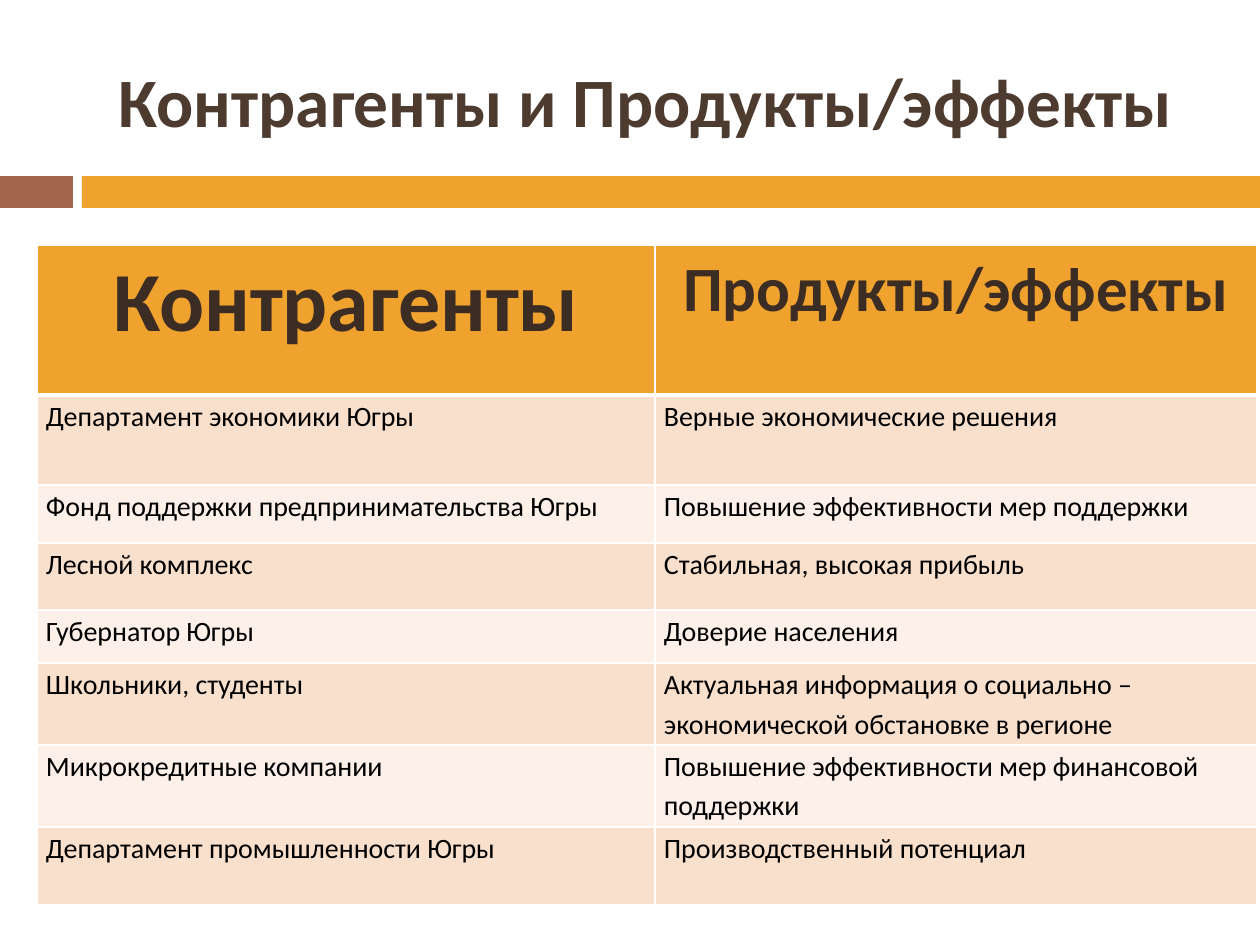
from lxml.etree import SubElement
from pptx import Presentation
from pptx.dml.color import RGBColor
from pptx.enum.shapes import MSO_SHAPE as Shape
from pptx.enum.text import MSO_ANCHOR as Anchor, PP_ALIGN as Align
from pptx.oxml.ns import qn
from pptx.util import Pt

PX = 914400 // 126
FONT = "Calibri"
ORANGE = RGBColor(0xF0, 0xA2, 0x2E)
RUST = RGBColor(0xA5, 0x64, 0x4E)
BROWN = RGBColor(0x4E, 0x3B, 0x30)
DARK = RGBColor(0x3B, 0x2C, 0x24)
BLACK = RGBColor(0, 0, 0)
WHITE = RGBColor(0xFF, 0xFF, 0xFF)
BANDS = RGBColor(0xF9, 0xE0, 0xCD), RGBColor(0xFC, 0xF0, 0xE8)

COLS = 618, 602
HEAD = [("Контрагенты", 48), ("Продукты/эффекты", 36)]
HEAD_H = 150
ROWS = [
    (90, "Департамент экономики Югры", "Верные экономические решения"),
    (58, "Фонд поддержки предпринимательства Югры",
     "Повышение эффективности мер поддержки"),
    (67, "Лесной комплекс", "Стабильная, высокая прибыль"),
    (53, "Губернатор Югры", "Доверие населения"),
    (82, "Школьники, студенты",
     "Актуальная информация о социально – экономической обстановке в регионе"),
    (82, "Микрокредитные компании",
     "Повышение эффективности мер финансовой поддержки"),
    (78, "Департамент промышленности Югры", "Производственный потенциал"),
]


def px(*vals):
    return [v * PX for v in vals]


def write(frame, text, size, color, bold=False, align=Align.LEFT, space=None):
    frame.word_wrap = True
    para = frame.paragraphs[0]
    para.alignment = align
    para.line_spacing = space
    run = para.add_run()
    run.text = text
    font = run.font
    font.name, font.size, font.bold = FONT, Pt(size), bold
    font.color.rgb = color


def bar(slide, box, color):
    rect = slide.shapes.add_shape(Shape.RECTANGLE, *px(*box))
    rect.shadow.inherit = False
    rect.fill.solid()
    rect.fill.fore_color.rgb = color
    rect.line.fill.background()


def title(slide, box, text):
    frame = slide.shapes.add_textbox(*px(*box)).text_frame
    frame.vertical_anchor = Anchor.MIDDLE
    write(frame, text, 39.6, BROWN, bold=True, align=Align.CENTER)


def paint(cell, color, top=1, bottom=1):
    """Fill a cell and give it white borders; widths are in points."""
    props = cell._tc.get_or_add_tcPr()
    for side, width in zip("LRTB", (1, 1, top, bottom)):
        line = SubElement(props, qn(f"a:ln{side}"), w=str(Pt(width)))
        fill = SubElement(line, qn("a:solidFill"))
        SubElement(fill, qn("a:srgbClr"), val=str(WHITE))
    cell.fill.solid()
    cell.fill.fore_color.rgb = color


def grid(slide, left, top):
    heights = [HEAD_H] + [row[0] for row in ROWS]
    box = px(left, top, sum(COLS), sum(heights))
    table = slide.shapes.add_table(len(heights), len(COLS), *box).table
    for col, width in zip(table.columns, COLS):
        col.width = width * PX
    for row, height in zip(table.rows, heights):
        row.height = height * PX

    for c, (text, size) in enumerate(HEAD):
        cell = table.cell(0, c)
        paint(cell, ORANGE, bottom=3)
        write(cell.text_frame, text, size, DARK, bold=True, align=Align.CENTER)

    for r, (_, *texts) in enumerate(ROWS, 1):
        for c, text in enumerate(texts):
            cell = table.cell(r, c)
            cell.margin_left = cell.margin_right = 9 * PX
            cell.margin_top = cell.margin_bottom = 0
            paint(cell, BANDS[(r - 1) % 2], top=3 if r == 1 else 1)
            write(cell.text_frame, text, 16, BLACK, space=1.15)


def main():
    deck = Presentation()
    deck.slide_width, deck.slide_height = px(1260, 945)
    slide = deck.slides.add_slide(deck.slide_layouts[6])
    bar(slide, (0, 176, 73, 32), RUST)
    bar(slide, (82, 176, 1178, 32), ORANGE)
    title(slide, (84, 32, 1124, 136), "Контрагенты и Продукты/эффекты")
    grid(slide, 37, 245)
    deck.save("out.pptx")


if __name__ == "__main__":
    main()
